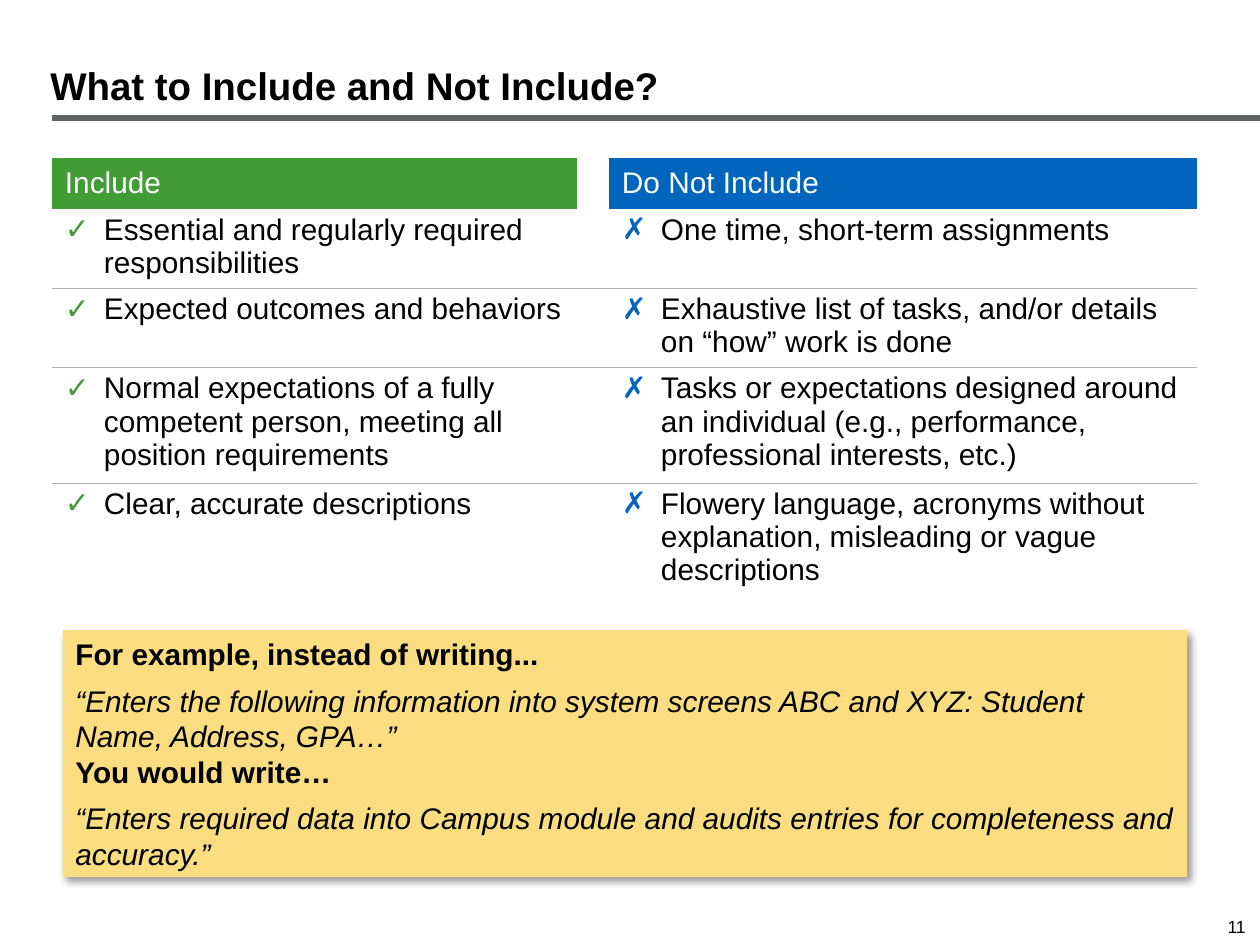
from lxml.etree import SubElement
from pptx import Presentation
from pptx.dml.color import RGBColor
from pptx.enum.shapes import MSO_CONNECTOR, MSO_SHAPE
from pptx.enum.text import MSO_ANCHOR, PP_ALIGN
from pptx.oxml.ns import qn
from pptx.util import Emu, Pt

PX_PER_INCH = 126
COLORS = {
    "black": "000000",
    "white": "FFFFFF",
    "gray": "616365",
    "rule": "B2B4B3",
    "green": "429C35",
    "blue": "0065BD",
    "yellow": "FADD80",
}
NO_TABLE_STYLE = "{2D5ABB26-0587-4C30-8999-92F81FD0307C}"


def px(length):
    return Emu(round(length * 914400 / PX_PER_INCH))


def rgb(name):
    return RGBColor.from_string(COLORS[name])


def add_element(parent, tag, **attributes):
    return SubElement(parent, qn(tag), {key: str(value) for key, value in attributes.items()})


def add_color(parent, name):
    return add_element(parent, "a:srgbClr", val=COLORS[name])


class SlideBuilder:
    def __init__(self, slide, font="Arial", size=17):
        self.slide = slide
        self.font = font
        self.size = size

    def format(self, paragraph, color="black", size=None, bold=False, italic=False):
        for run in paragraph.runs:
            run.font.name = self.font
            run.font.size = Pt(size or self.size)
            run.font.bold = bold
            run.font.italic = italic
            run.font.color.rgb = rgb(color)

    def text(self, box, text, anchor, align=PP_ALIGN.LEFT, **style):
        shape = self.slide.shapes.add_textbox(*map(px, box))
        frame = shape.text_frame
        frame.word_wrap = True
        frame.vertical_anchor = anchor
        frame.text = text
        paragraph = frame.paragraphs[0]
        paragraph.alignment = align
        paragraph.line_spacing = 0.9
        self.format(paragraph, **style)

    def line(self, start, end, color, width):
        line = self.slide.shapes.add_connector(MSO_CONNECTOR.STRAIGHT, *map(px, start + end))
        line.line.color.rgb = rgb(color)
        line.line.width = Pt(width)
        add_element(line._element.spPr, "a:effectLst")

    def callout(self, box, fill, paragraphs):
        shape = self.slide.shapes.add_shape(MSO_SHAPE.RECTANGLE, *map(px, box))
        shape.fill.solid()
        shape.fill.fore_color.rgb = rgb(fill)
        shape.line.fill.background()
        effects = add_element(shape._element.spPr, "a:effectLst")
        shadow = add_element(effects, "a:outerShdw", blurRad=Pt(4), dist=Pt(3),
                             dir=45 * 60000, algn="tl", rotWithShape=0)
        add_element(add_color(shadow, "black"), "a:alpha", val=40000)

        frame = shape.text_frame
        frame.word_wrap = True
        frame.vertical_anchor = MSO_ANCHOR.TOP
        frame.text = "\n".join(text for text, _ in paragraphs)
        for paragraph, (_, is_quote) in zip(frame.paragraphs, paragraphs):
            paragraph.alignment = PP_ALIGN.LEFT
            if is_quote:
                paragraph.space_before = Pt(6)
            self.format(paragraph, bold=not is_quote, italic=is_quote)

    def bullet(self, paragraph, symbol, color):
        properties = paragraph._p.get_or_add_pPr()
        properties.set("marL", str(px(39)))
        properties.set("indent", str(-px(39)))
        add_color(add_element(properties, "a:buClr"), color)
        add_element(properties, "a:buFont", typeface=self.font)
        add_element(properties, "a:buChar", char=symbol)

    def bottom_border(self, cell, color):
        border = add_element(cell._tc.get_or_add_tcPr(), "a:lnB", w=Pt(0.5))
        add_color(add_element(border, "a:solidFill"), color)

    def table(self, left, top, widths, heights, columns):
        """Each column is (header, color, symbol, items), or None for a gap."""
        frame = self.slide.shapes.add_table(
            len(heights), len(widths), px(left), px(top), px(sum(widths)), px(sum(heights)))
        table = frame.table
        table.first_row = table.horz_banding = False
        table._tbl.tblPr.find(qn("a:tableStyleId")).text = NO_TABLE_STYLE
        for column, width in zip(table.columns, widths):
            column.width = px(width)
        for row, height in zip(table.rows, heights):
            row.height = px(height)

        for column_index, column in enumerate(columns):
            for row_index in range(len(heights)):
                cell = table.cell(row_index, column_index)
                cell.margin_left = cell.margin_right = px(13)
                cell.margin_top = cell.margin_bottom = px(4)
                # Rules run between the item rows only
                if 0 < row_index < len(heights) - 1:
                    self.bottom_border(cell, "rule")
                cell.fill.background()
                if column is None:
                    continue
                header, color, symbol, items = column
                paragraph = cell.text_frame.paragraphs[0]
                if row_index == 0:
                    cell.fill.solid()
                    cell.fill.fore_color.rgb = rgb(color)
                    cell.vertical_anchor = MSO_ANCHOR.MIDDLE
                    paragraph.text = header
                    self.format(paragraph, "white")
                else:
                    paragraph.text = items[row_index - 1]
                    self.bullet(paragraph, symbol, color)
                    self.format(paragraph)


def main():
    presentation = Presentation()
    presentation.slide_width = px(1260)
    presentation.slide_height = px(945)
    builder = SlideBuilder(presentation.slides.add_slide(presentation.slide_layouts[6]))

    # Slide number, title and title rule
    builder.text((1182, 912, 76, 32), "11", MSO_ANCHOR.MIDDLE, PP_ALIGN.RIGHT, size=10)
    builder.line((52, 118), (1260, 118), "gray", 3)
    builder.text((38, 10, 1201, 105), "What to Include and Not Include?",
                 MSO_ANCHOR.BOTTOM, size=22, bold=True)

    # Comparison table
    include = [
        "Essential and regularly required responsibilities",
        "Expected outcomes and behaviors",
        "Normal expectations of a fully competent person, meeting all position requirements",
        "Clear, accurate descriptions",
    ]
    exclude = [
        "One time, short-term assignments",
        "Exhaustive list of tasks, and/or details on “how” work is done",
        "Tasks or expectations designed around an individual "
        "(e.g., performance, professional interests, etc.)",
        "Flowery language, acronyms without explanation, misleading or vague descriptions",
    ]
    builder.table(52, 158, (525, 32, 588), (51, 74, 75, 107, 131), [
        ("Include", "green", "✓", include),
        None,
        ("Do Not Include", "blue", "✗", exclude),
    ])

    # Example callout
    builder.callout((63, 630, 1124, 247), "yellow", [
        ("For example, instead of writing...", False),
        ("“Enters the following information into system screens ABC and XYZ: "
         "Student Name, Address, GPA…”", True),
        ("You would write…", False),
        ("“Enters required data into Campus module and audits entries "
         "for completeness and accuracy.”", True),
    ])

    presentation.save("out.pptx")


if __name__ == "__main__":
    main()
